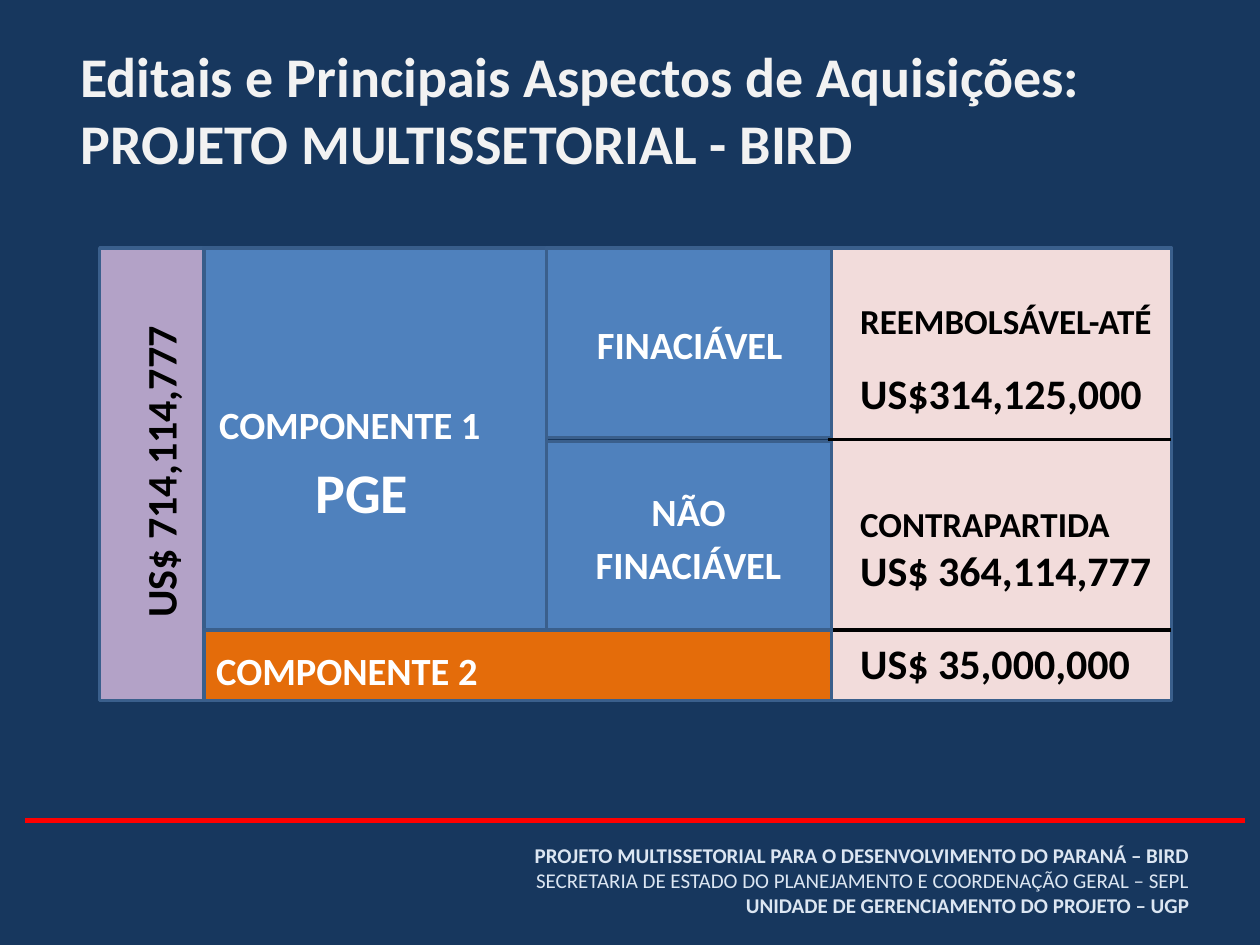
"""Build the slide on the funding split of the multi-sector project."""
from dataclasses import dataclass

from lxml.etree import SubElement
from pptx import Presentation as Deck
from pptx.dml.color import RGBColor as Rgb
from pptx.enum.shapes import MSO_CONNECTOR as Link, MSO_SHAPE as Form
from pptx.enum.text import MSO_ANCHOR as Anchor, PP_ALIGN as Align
from pptx.oxml.ns import qn
from pptx.slide import Slide
from pptx.util import Cm, Pt


@dataclass(frozen=True)
class Theme:
    font: str = "Calibri"
    back: str = "17375E"
    pale: str = "F2F2F2"
    mist: str = "DCE6F2"
    white: str = "FFFFFF"
    black: str = "000000"
    red: str = "FF0000"
    lilac: str = "B3A2C7"
    blue: str = "4F81BD"
    orange: str = "E46C0A"
    rose: str = "F2DCDB"
    edge: str = "3A5F8C"
    deep: str = "385D8A"
    head: int = 32
    sum: int = 24
    label: int = 22
    note: int = 20
    foot: int = 12


LOOK = Theme()


@dataclass(frozen=True)
class Block:
    left: float
    top: float
    right: float
    base: float
    fill: str
    edge: str = LOOK.edge


@dataclass(frozen=True)
class Rule:
    left: float
    right: float
    y: float
    tint: str
    width: float


@dataclass(frozen=True)
class Line:
    text: str
    size: int
    bold: bool = True
    space: float = 1.0
    lead: float = 0
    align: Align = Align.LEFT


def draw_block(slide: Slide, block: Block) -> None:
    shape = slide.shapes.add_shape(
        Form.RECTANGLE, Cm(block.left), Cm(block.top),
        Cm(block.right - block.left), Cm(block.base - block.top))
    shape.shadow.inherit = False
    shape.fill.solid()
    shape.fill.fore_color.rgb = Rgb.from_string(block.fill)
    shape.line.color.rgb = Rgb.from_string(block.edge)
    shape.line.width = Pt(2)


def draw_rule(slide: Slide, rule: Rule) -> None:
    link = slide.shapes.add_connector(
        Link.STRAIGHT, Cm(rule.left), Cm(rule.y), Cm(rule.right), Cm(rule.y))
    link.line.color.rgb = Rgb.from_string(rule.tint)
    link.line.width = Pt(rule.width)
    SubElement(link._element.spPr, qn("a:effectLst"))


def write(slide: Slide, lines: list[Line], *, left: float, top: float,
          width: float, height: float, tint: str = LOOK.white,
          anchor: Anchor = Anchor.TOP, turn: bool = False) -> None:
    frame = slide.shapes.add_textbox(
        Cm(left), Cm(top), Cm(width), Cm(height)).text_frame
    frame.word_wrap = True
    frame.vertical_anchor = anchor
    if turn:
        frame._txBody.bodyPr.set("vert", "vert270")
    for rank, line in enumerate(lines):
        para = frame.add_paragraph() if rank else frame.paragraphs[0]
        para.alignment = line.align
        para.line_spacing = line.space
        para.space_before = Pt(line.lead)
        run = para.add_run()
        run.text = line.text
        run.font.name = LOOK.font
        run.font.size = Pt(line.size)
        run.font.bold = line.bold
        run.font.color.rgb = Rgb.from_string(tint)


def label(text: str, size: int = LOOK.label, align: Align = Align.CENTER) -> Line:
    return Line(text, size, space=1.15, align=align)


def main() -> None:
    deck = Deck()
    deck.slide_width, deck.slide_height = Cm(25.4), Cm(19.05)
    slide = deck.slides.add_slide(deck.slide_layouts[6])
    slide.background.fill.solid()
    slide.background.fill.fore_color.rgb = Rgb.from_string(LOOK.back)

    x = (2.01, 4.11, 11.02, 16.76, 23.62)
    top, mid, low, base = 5.0, 8.86, 12.7, 14.12
    gap = 0.04
    blocks = [
        Block(x[0], top, x[1], base, LOOK.lilac),
        Block(x[1], top, x[2], low, LOOK.blue, LOOK.deep),
        Block(x[1], low, x[3], base, LOOK.orange),
        Block(x[2], top, x[3], mid - gap, LOOK.blue),
        Block(x[3], top, x[4], base, LOOK.rose),
        Block(x[2], mid + gap, x[3], low, LOOK.blue),
    ]
    rules = [
        Rule(0.51, 25.1, 16.54, LOOK.red, 3),
        Rule(16.69, 23.6, mid, LOOK.black, 1.75),
        Rule(16.8, 23.6, low, LOOK.black, 1.75),
    ]
    for block in blocks:
        draw_block(slide, block)
    for rule in rules:
        draw_rule(slide, rule)

    write(slide, [Line("Editais e Principais Aspectos de Aquisições:", LOOK.head),
                  Line("PROJETO MULTISSETORIAL - BIRD", LOOK.head)],
          left=1.37, top=0.71, width=22.86, height=3.81, tint=LOOK.pale)
    write(slide, [label("US$ 714,114,777", LOOK.sum)],
          left=2.44, top=5.92, width=1.27, height=7.19,
          tint=LOOK.black, turn=True)
    write(slide, [label("COMPONENTE 1", align=Align.LEFT),
                  label("PGE", LOOK.head)],
          left=4.17, top=7.82, width=6.25, height=2.69)
    write(slide, [label("COMPONENTE 2", align=Align.LEFT)],
          left=4.11, top=12.78, width=6.91, height=1.27)
    write(slide, [label("FINACIÁVEL")],
          left=11.63, top=6.2, width=4.55, height=1.27)
    write(slide, [label("NÃO"), label("FINACIÁVEL")],
          left=11.38, top=9.58, width=5, height=2.29)
    write(slide, [Line("REEMBOLSÁVEL-ATÉ", LOOK.note),
                  Line("US$314,125,000", LOOK.sum, space=1.5),
                  Line("CONTRAPARTIDA", LOOK.note, space=1.5, lead=36.6),
                  Line("US$ 364,114,777", LOOK.sum),
                  Line("US$ 35,000,000", LOOK.sum, lead=24.4)],
          left=17.09, top=5.92, width=6.86, height=8.76, tint=LOOK.black)
    foot = [
        ("PROJETO MULTISSETORIAL PARA O DESENVOLVIMENTO DO PARANÁ – BIRD", True),
        ("SECRETARIA DE ESTADO DO PLANEJAMENTO E COORDENAÇÃO GERAL – SEPL", False),
        ("UNIDADE DE GERENCIAMENTO DO PROJETO – UGP", True),
    ]
    write(slide, [Line(text, LOOK.foot, bold, align=Align.RIGHT)
                  for text, bold in foot],
          left=1.37, top=16.94, width=22.86, height=1.6,
          tint=LOOK.mist, anchor=Anchor.MIDDLE)
    deck.save("out.pptx")


if __name__ == "__main__":
    main()
